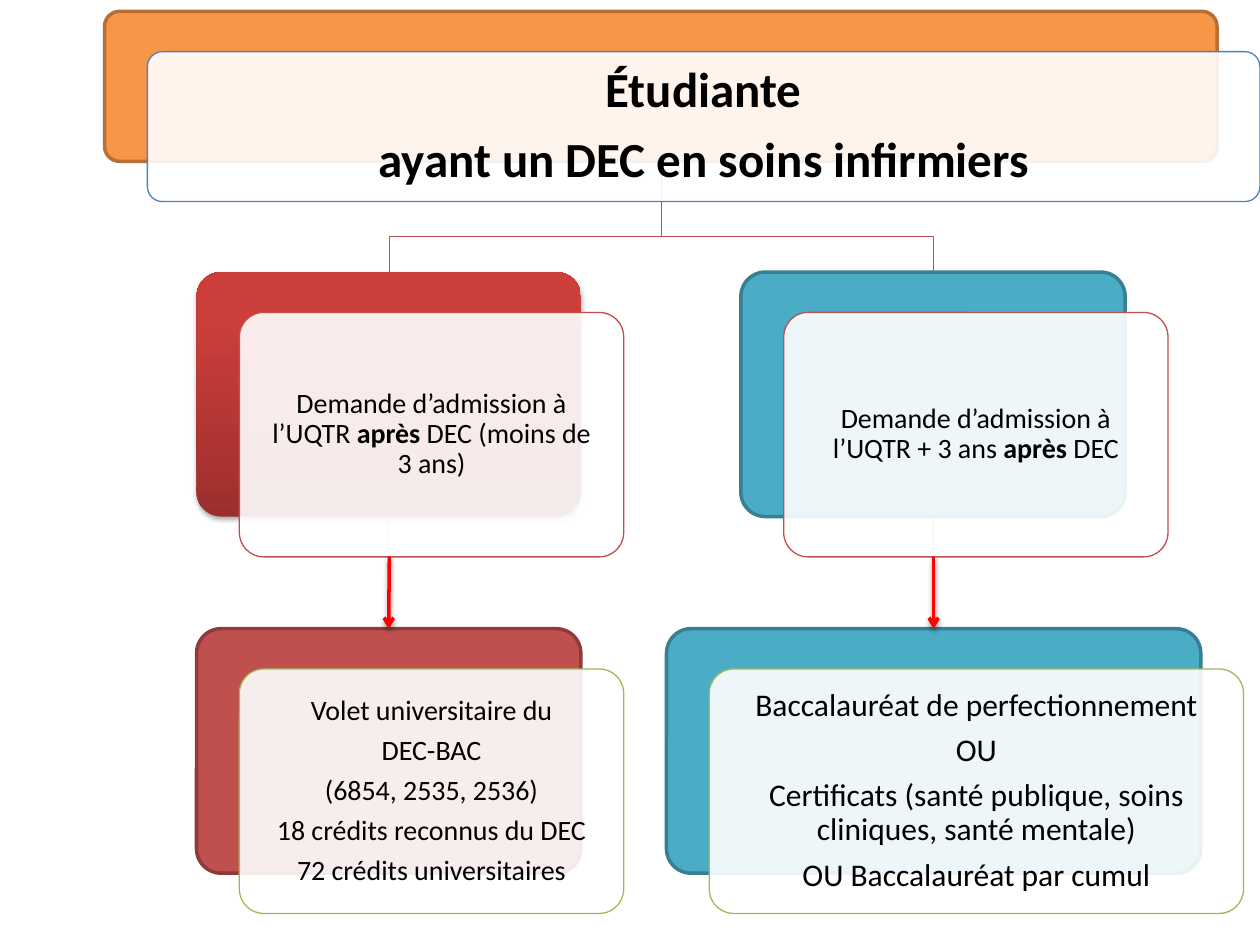
from lxml import etree
from pptx import Presentation
from pptx.dml.color import RGBColor
from pptx.enum import shapes, text
from pptx.oxml.ns import qn
from pptx.util import Inches, Pt


def paint(sp, fill=None, line=None, width=0.75, alpha=100, shadow=None):
    """Set fill, outline and effects; fill is a hex string or a pair of gradient colours."""
    pr = sp.element.spPr
    if isinstance(fill, tuple):
        sp.fill.gradient()
        sp.fill.gradient_angle = 90
        for stop, colour, position in zip(sp.fill.gradient_stops, fill, (0, 0.8)):
            stop.color.rgb = RGBColor.from_string(colour)
            stop.position = position
    elif fill:
        sp.fill.solid()
        sp.fill.fore_color.rgb = RGBColor.from_string(fill)
        clr = pr.find(qn("a:solidFill")).find(qn("a:srgbClr"))
        etree.SubElement(clr, qn("a:alpha"), val=str(alpha * 1000))
    elif hasattr(sp, "fill"):
        sp.fill.background()
    if line:
        sp.line.color.rgb = RGBColor.from_string(line)
        sp.line.width = Pt(width)
    else:
        sp.line.fill.background()
    effects = etree.SubElement(pr, qn("a:effectLst"))
    if shadow:
        outer = etree.SubElement(effects, qn("a:outerShdw"), blurRad=str(Pt(3.1)),
                                 dist=str(Pt(1.7)), dir="5400000", rotWithShape="0")
        clr = etree.SubElement(outer, qn("a:srgbClr"), val="000000")
        etree.SubElement(clr, qn("a:alpha"), val=str(shadow * 1000))


def write(sp, paragraphs, size=16, bold=False, margin=0.13):
    """Fill a shape with centred paragraphs; every second part between * is bold."""
    tf = sp.text_frame
    tf.word_wrap = True
    tf.vertical_anchor = text.MSO_ANCHOR.MIDDLE
    tf.margin_left = tf.margin_right = tf.margin_top = tf.margin_bottom = Inches(margin)
    for i, line in enumerate(paragraphs):
        p = tf.paragraphs[0] if i == 0 else tf.add_paragraph()
        p.alignment = text.PP_ALIGN.CENTER
        p.line_spacing = 0.9
        p.space_after = Pt(0.35 * size)
        for j, part in enumerate(line.split("*")):
            r = p.add_run()
            r.text = part
            r.font.name = "Calibri"
            r.font.size = Pt(size)
            r.font.bold = bold or j % 2 == 1
            r.font.color.rgb = RGBColor.from_string("000000")


prs = Presentation()
prs.slide_width, prs.slide_height = Inches(10), Inches(7.5)
s = prs.slides.add_slide(prs.slide_layouts[6])

ROOT_X, ROOT_BOTTOM, BEND = 5.25, 1.28, 1.88
TOP, BOTTOM, CARD_H = 2.16, 4.99, 1.94
COLUMNS = (7.41, 3.09)
GREEN, RED, BLUE = "9BBB59", "C0504D", "4F81BD"

# Branches lie behind the cards
stems = []
for x in COLUMNS:
    stem = s.shapes.add_connector(shapes.MSO_CONNECTOR.STRAIGHT, Inches(x),
                                  Inches(TOP + CARD_H), Inches(x), Inches(BOTTOM))
    paint(stem, line=GREEN)
    stems.append(stem)
    branch = s.shapes.build_freeform(Inches(ROOT_X), Inches(ROOT_BOTTOM))
    branch.add_line_segments([(Inches(ROOT_X), Inches(BEND)), (Inches(x), Inches(BEND)),
                              (Inches(x), Inches(TOP))], close=False)
    paint(branch.convert_to_shape(), line=RED)

# Each card: a coloured back and an offset translucent front with the text
cards = [
    # left, top, width, height, back format, front outline, paragraphs, text format
    (0.83, 0.09, 8.83, 1.19, dict(fill="F79646", line="B76F34", width=2), BLUE,
     ["Étudiante", "ayant un DEC en soins infirmiers"],
     dict(size=28, bold=True, margin=0.16)),
    (1.56, TOP, 3.05, CARD_H, dict(fill=("9C2F2D", "CB3E3A"), shadow=35), RED,
     ["Demande d’admission à l’UQTR *après* DEC (moins de 3 ans)"], {}),
    (1.56, BOTTOM, 3.05, CARD_H, dict(fill=RED, line="8E3B39", width=2), GREEN,
     ["Volet universitaire du", "DEC-BAC", "(6854, 2535, 2536)",
      "18 crédits reconnus du DEC", "72 crédits universitaires"], {}),
    (5.88, TOP, 3.05, CARD_H, dict(fill="4BACC6", line="377F92", width=2), RED,
     ["Demande d’admission à l’UQTR + 3 ans *après* DEC"], {}),
    (5.29, BOTTOM, 4.24, CARD_H, dict(fill="4BACC6", line="377F92", width=2), GREEN,
     ["Baccalauréat de perfectionnement", "OU",
      "Certificats (santé publique, soins cliniques, santé mentale)",
      "OU Baccalauréat par cumul"], dict(size=18)),
]
backs = []
for left, top, width, height, back_format, outline, paragraphs, text_format in cards:
    back, front = [
        s.shapes.add_shape(shapes.MSO_SHAPE.ROUNDED_RECTANGLE, Inches(left + dx),
                           Inches(top + dy), Inches(width), Inches(height))
        for dx, dy in ((0, 0), (0.34, 0.32))]
    back.adjustments[0] = front.adjustments[0] = 0.1
    paint(back, **back_format)
    paint(front, fill="FFFFFF", line=outline, alpha=90)
    write(front, paragraphs, **text_format)
    backs.append(back)

# Join the stems, then lay the red arrows over them
_, left_top, left_bottom, right_top, right_bottom = backs
pairs = ((right_top, right_bottom), (left_top, left_bottom))
for x, stem, (upper, lower) in zip(COLUMNS, stems, pairs):
    stem.begin_connect(upper, 2)
    stem.end_connect(lower, 0)
    arrow = s.shapes.add_connector(shapes.MSO_CONNECTOR.STRAIGHT, Inches(x), Inches(4.42),
                                   Inches(x), Inches(5))
    arrow.end_connect(lower, 0)
    paint(arrow, line="FF0000", width=2, shadow=38)
    etree.SubElement(arrow.element.spPr.find(qn("a:ln")), qn("a:tailEnd"), type="arrow")

prs.save("out.pptx")
